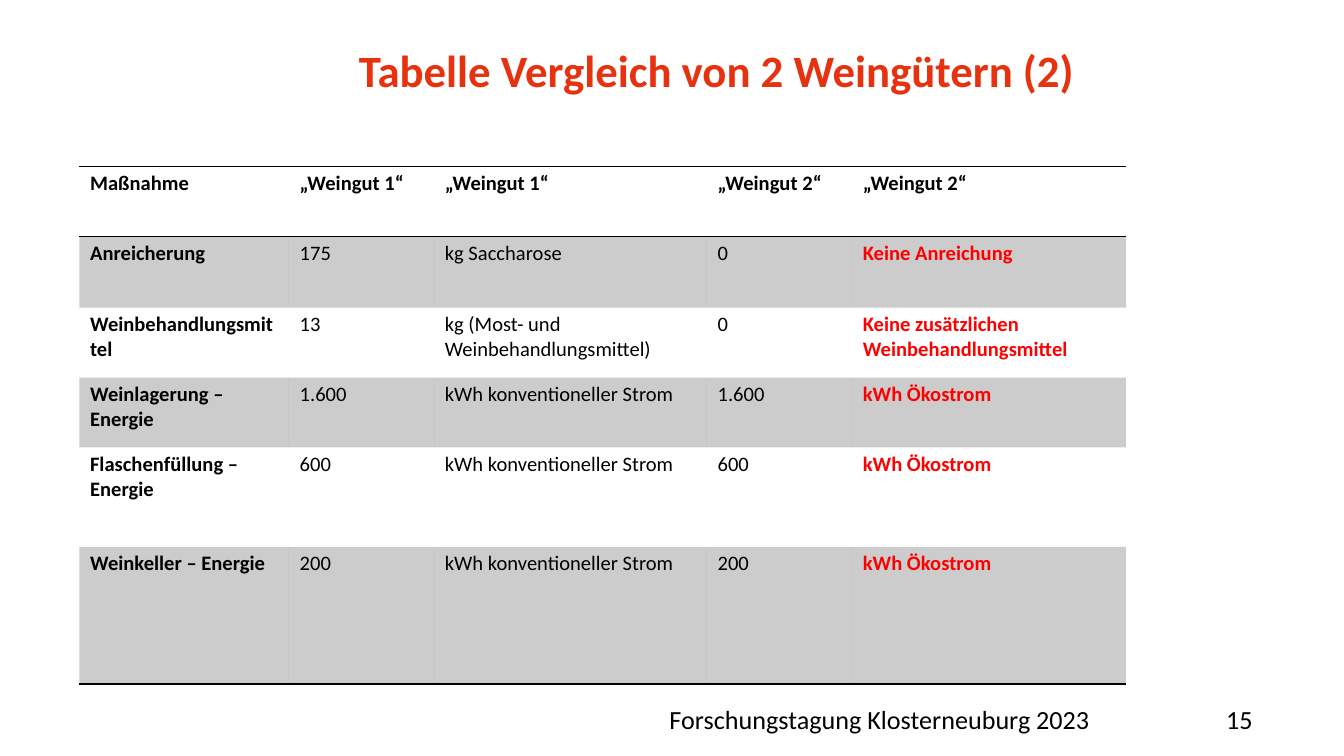
from lxml import etree
from pptx import Presentation
from pptx.dml.color import RGBColor
from pptx.enum.text import MSO_ANCHOR, PP_ALIGN
from pptx.oxml.ns import qn
from pptx.util import Inches, Pt

LEFT, RIGHT = PP_ALIGN.LEFT, PP_ALIGN.RIGHT
TOP, MIDDLE = MSO_ANCHOR.TOP, MSO_ANCHOR.MIDDLE
WIDTH = 10
HEIGHT = WIDTH * 9 / 16
MARGIN = 0.59
FONT = "Calibri"
BLACK, RED, TITLE_RED = "000000", "FF0000", "E6320F"
PLAIN_STYLE = "{2D5ABB26-0587-4C30-8999-92F81FD0307C}"

COLUMNS = [1.56, 1.08, 2.03, 1.08, 2.04]
ROWS = [0.52, 0.53, 0.52, 0.52, 0.74, 1.02]
POWER, GREEN_POWER = "kWh konventioneller Strom", "kWh Ökostrom"
MEASURES = [
    ["Maßnahme", "„Weingut 1“", "„Weingut 1“", "„Weingut 2“", "„Weingut 2“"],
    ["Anreicherung", "175", "kg Saccharose", "0", "Keine Anreichung"],
    ["Weinbehandlungsmittel", "13", "kg (Most- und Weinbehandlungsmittel)", "0",
     "Keine zusätzlichen Weinbehandlungsmittel"],
    ["Weinlagerung – Energie", "1.600", POWER, "1.600", GREEN_POWER],
    ["Flaschenfüllung – Energie", "600", POWER, "600", GREEN_POWER],
    ["Weinkeller – Energie", "200", POWER, "200", GREEN_POWER],
]


def color(value):
    return RGBColor.from_string(value)


def write(frame, text, size, fill=BLACK, bold=False, align=LEFT, spacing=None):
    para = frame.paragraphs[0]
    para.alignment = align
    if spacing:
        para.line_spacing = Pt(spacing)
    span = para.add_run()
    span.text = text
    span.font.name = FONT
    span.font.size = Pt(size)
    span.font.bold = bold
    span.font.color.rgb = color(fill)


def add_text(page, text, left, top, width, height, anchor=TOP, **style):
    box = page.shapes.add_textbox(*map(Inches, (left, top, width, height)))
    frame = box.text_frame
    frame.word_wrap = True
    frame.vertical_anchor = anchor
    frame.margin_left = frame.margin_right = 0
    frame.margin_top = frame.margin_bottom = 0
    write(frame, text, **style)


def add_border(cell, side):
    """Draw a black 1 pt line on side "T" or "B"; call before filling the cell."""
    line = etree.SubElement(cell._tc.get_or_add_tcPr(), qn(f"a:ln{side}"), w=str(Pt(1)))
    fill = etree.SubElement(line, qn("a:solidFill"))
    etree.SubElement(fill, qn("a:srgbClr"), val=BLACK)


def shade(cell):
    """Fill the cell with black at 20 % opacity."""
    cell.fill.solid()
    cell.fill.fore_color.rgb = color(BLACK)
    tone = cell._tc.tcPr.find(qn("a:solidFill") + "/" + qn("a:srgbClr"))
    etree.SubElement(tone, qn("a:alpha"), val="20000")


def format_cell(cell, text, row, column):
    cell.margin_left = cell.margin_right = Inches(0.08)
    cell.margin_top = cell.margin_bottom = Inches(0.03)
    last_column = column == len(COLUMNS) - 1
    write(cell.text_frame, text, size=11,
          fill=RED if row > 0 and last_column else BLACK,
          bold=row == 0 or column == 0 or last_column)
    if row == 0:
        add_border(cell, "T")
    if row in (0, len(ROWS) - 1):
        add_border(cell, "B")
    if row % 2:
        shade(cell)
    else:
        cell.fill.background()


def add_measures(page, left, top):
    frame = page.shapes.add_table(len(ROWS), len(COLUMNS), Inches(left), Inches(top),
                                  Inches(sum(COLUMNS)), Inches(sum(ROWS)))
    table = frame.table
    table.first_row = table.horz_banding = False
    table._tbl.tblPr.find(qn("a:tableStyleId")).text = PLAIN_STYLE
    for column, width in zip(table.columns, COLUMNS):
        column.width = Inches(width)
    for row, height in zip(table.rows, ROWS):
        row.height = Inches(height)
    for r, texts in enumerate(MEASURES):
        for c, text in enumerate(texts):
            format_cell(table.cell(r, c), text, r, c)


def add_footer(page, text, left, width):
    add_text(page, text, left, 5.24, width, 0.22, anchor=MIDDLE, size=14, align=RIGHT)


def main():
    deck = Presentation()
    deck.slide_width, deck.slide_height = Inches(WIDTH), Inches(HEIGHT)
    page = deck.slides.add_slide(deck.slide_layouts[6])
    add_text(page, "Tabelle Vergleich von 2 Weingütern (2)", 2.67, 0.3, 6.54, 0.4,
             size=24, fill=TITLE_RED, bold=True, spacing=30)
    add_measures(page, MARGIN, 1.24)
    add_footer(page, "15", 8.27, 1.05)
    add_footer(page, "Forschungstagung Klosterneuburg 2023", MARGIN, 7.52)
    deck.save("out.pptx")


if __name__ == "__main__":
    main()
